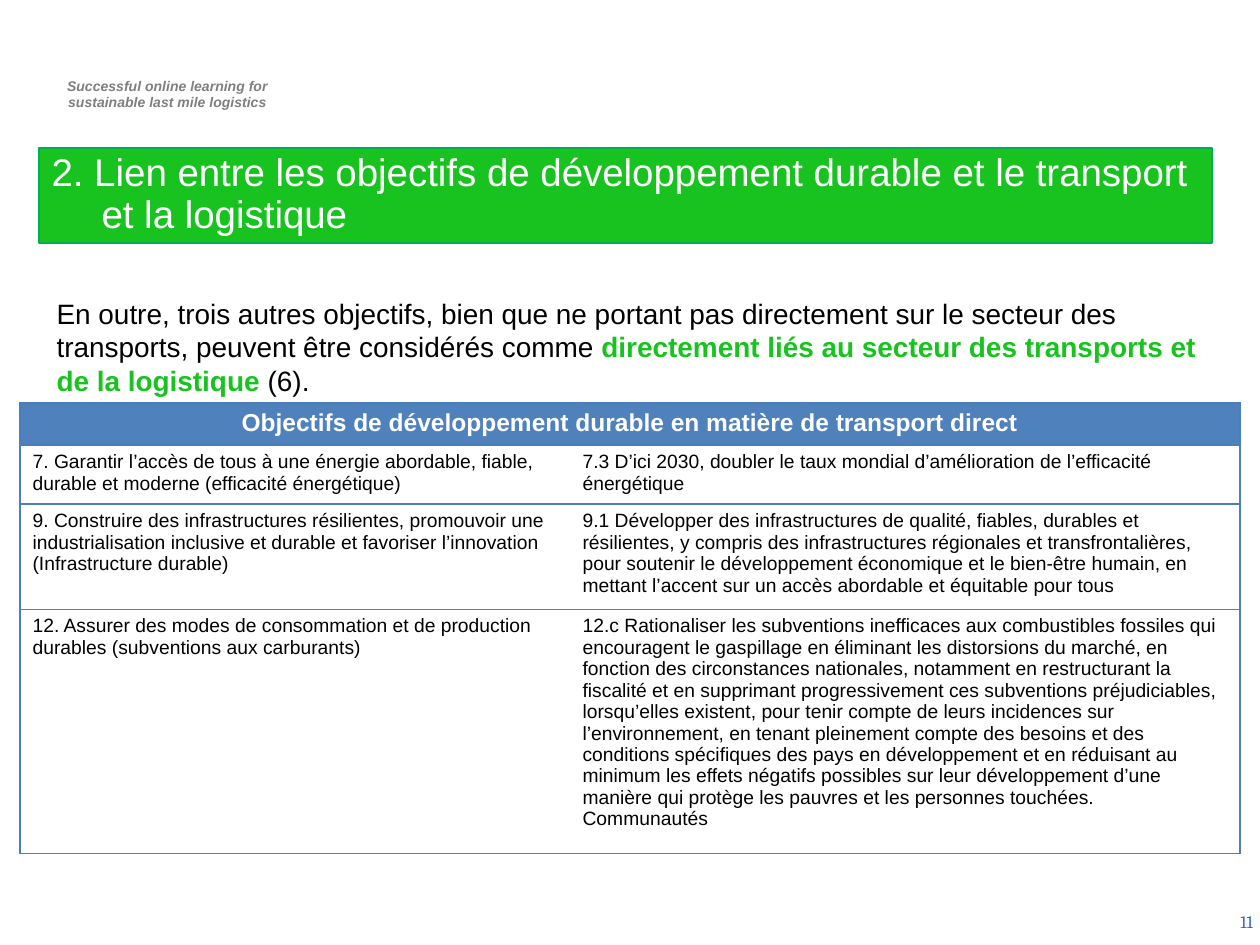
from dataclasses import dataclass

from lxml.etree import SubElement
from pptx import Presentation
from pptx.dml.color import RGBColor
from pptx.enum.text import MSO_ANCHOR as Anchor, MSO_AUTO_SIZE as AutoSize, PP_ALIGN as Align
from pptx.oxml.ns import qn
from pptx.util import Emu, Pt

WHITE, BLACK, GREEN, BLUE, BORDER = "FFFFFF", "000000", "18C320", "4F81BD", "4B7EBC"
COLUMNS = (550, 670)


@dataclass(frozen=True)
class Box:
    """A rectangle in px."""
    x: int
    y: int
    w: int
    h: int


@dataclass(frozen=True)
class Style:
    """The look of a run."""
    size: int
    color: str
    bold: bool = False
    italic: bool = False
    font: str = "Arial"


@dataclass(frozen=True)
class Goal:
    """A table row: the goal, its target and the row height in px."""
    goal: str
    target: str
    height: int


HEADING = "Objectifs de développement durable en matière de transport direct"
HEADING_HEIGHT = 41
GOALS = (
    Goal("7. Garantir l’accès de tous à une énergie abordable, fiable, durable et moderne "
         "(efficacité énergétique)",
         "7.3 D’ici 2030, doubler le taux mondial d’amélioration de l’efficacité énergétique", 59),
    Goal("9. Construire des infrastructures résilientes, promouvoir une industrialisation "
         "inclusive et durable et favoriser l’innovation (Infrastructure durable)",
         "9.1 Développer des infrastructures de qualité, fiables, durables et résilientes, "
         "y compris des infrastructures régionales et transfrontalières, pour soutenir le "
         "développement économique et le bien-être humain, en mettant l’accent sur un accès "
         "abordable et équitable pour tous", 105),
    Goal("12. Assurer des modes de consommation et de production durables "
         "(subventions aux carburants)",
         "12.c Rationaliser les subventions inefficaces aux combustibles fossiles qui "
         "encouragent le gaspillage en éliminant les distorsions du marché, en fonction des "
         "circonstances nationales, notamment en restructurant la fiscalité et en supprimant "
         "progressivement ces subventions préjudiciables, lorsqu’elles existent, pour tenir "
         "compte de leurs incidences sur l’environnement, en tenant pleinement compte des "
         "besoins et des conditions spécifiques des pays en développement et en réduisant au "
         "minimum les effets négatifs possibles sur leur développement d’une manière qui "
         "protège les pauvres et les personnes touchées.\vCommunautés", 244),
)


def px(n: int) -> Emu:
    """Turn px into EMU at 126 px to the inch."""
    return Emu(round(n * 914400 / 126))


def rgb(color: str) -> RGBColor:
    """Turn a hex string into a colour."""
    return RGBColor.from_string(color)


def place(sp, box: Box) -> None:
    """Move and size a shape."""
    sp.left, sp.top, sp.width, sp.height = map(px, (box.x, box.y, box.w, box.h))


def format_run(r, style: Style) -> None:
    """Apply a style to a run."""
    f = r.font
    f.name, f.size, f.bold, f.italic = style.font, Pt(style.size), style.bold, style.italic
    f.color.rgb = rgb(style.color)


def format_text(tf, style: Style, align=Align.LEFT) -> None:
    """Apply a style and an alignment to all the text of a frame."""
    tf.word_wrap = True
    for p in tf.paragraphs:
        p.alignment = align
        for r in p.runs:
            format_run(r, style)


def set_indent(p, left: int, first: int) -> None:
    """Set the left margin and the first-line indent of a paragraph in px."""
    ppr = p._p.get_or_add_pPr()
    ppr.set("marL", str(px(left)))
    ppr.set("indent", str(px(first)))


def add_text(s, box: Box, text: str, style: Style, align, anchor=Anchor.TOP):
    """Add a text box and return its frame."""
    tf = s.shapes.add_textbox(*map(px, (box.x, box.y, box.w, box.h))).text_frame
    tf.text = text
    tf.vertical_anchor = anchor
    format_text(tf, style, align)
    return tf


def fill_title(sp) -> None:
    """Write the title in its green bar."""
    place(sp, Box(39, 148, 1173, 95))
    sp.fill.solid()
    sp.fill.fore_color.rgb = rgb(GREEN)
    sp.line.color.rgb = rgb("00B050")
    sp.line.width = Pt(0.75)
    tf = sp.text_frame
    tf.text = ("2. Lien entre les objectifs de développement durable et le transport "
               "et la logistique")
    tf.auto_size, tf.vertical_anchor = AutoSize.NONE, Anchor.BOTTOM
    format_text(tf, Style(22, WHITE))
    tf.paragraphs[0].line_spacing = 0.9
    set_indent(tf.paragraphs[0], 50, -50)


def fill_body(sp) -> None:
    """Write the introduction with its green emphasis."""
    place(sp, Box(44, 290, 1168, 149))
    tf = sp.text_frame
    tf.auto_size, tf.word_wrap = AutoSize.NONE, True
    p = tf.paragraphs[0]
    set_indent(p, 0, 0)
    SubElement(p._p.get_or_add_pPr(), qn("a:buNone"))
    p.space_before = Pt(0)
    plain = Style(16, BLACK)
    for text, style in (
        ("En outre, trois autres objectifs, bien que ne portant pas directement sur le secteur "
         "des transports, peuvent être considérés comme ", plain),
        ("directement liés au secteur des transports et de la logistique ",
         Style(16, GREEN, bold=True)),
        ("(6).", plain),
    ):
        r = p.add_run()
        r.text = text
        format_run(r, style)


def set_borders(cell, sides: str) -> None:
    """Draw the named sides of a cell and clear the others."""
    tcpr = cell._tc.get_or_add_tcPr()
    for side in "LRTB":
        ln = SubElement(tcpr, qn(f"a:ln{side}"), w=str(Pt(0.75)))
        if side in sides:
            SubElement(SubElement(ln, qn("a:solidFill")), qn("a:srgbClr"), val=BORDER)
        else:
            SubElement(ln, qn("a:noFill"))


def fill_cell(cell, text: str, style: Style, fill: str, sides: str, align=Align.LEFT) -> None:
    """Write and format a table cell."""
    set_borders(cell, sides)
    cell.fill.solid()
    cell.fill.fore_color.rgb = rgb(fill)
    cell.text = text
    format_text(cell.text_frame, style, align)


def add_goals(s) -> None:
    """Add the table of goals under one merged heading."""
    heights = [HEADING_HEIGHT] + [g.height for g in GOALS]
    area = map(px, (20, 403, sum(COLUMNS), sum(heights)))
    table = s.shapes.add_table(len(heights), len(COLUMNS), *area).table
    for column, w in zip(table.columns, COLUMNS):
        column.width = px(w)
    for row, h in zip(table.rows, heights):
        row.height = px(h)
    table.cell(0, 0).merge(table.cell(0, 1))
    fill_cell(table.cell(0, 0), HEADING, Style(14, WHITE, bold=True), BLUE, "LRTB", Align.CENTER)
    for i, g in enumerate(GOALS, 1):
        for j, (text, sides) in enumerate(((g.goal, "LTB"), (g.target, "RTB"))):
            fill_cell(table.cell(i, j), text, Style(11, BLACK), WHITE, sides)


def main() -> None:
    """Build and save the slide."""
    prs = Presentation()
    prs.slide_width, prs.slide_height = px(1260), px(945)
    s = prs.slides.add_slide(prs.slide_layouts[1])
    tf = add_text(s, Box(37, 71, 256, 47),
                  "Successful online learning for\nsustainable last mile logistics",
                  Style(8, "7F7F7F", bold=True, italic=True), Align.CENTER)
    for p in tf.paragraphs:
        set_indent(p, 5, 0)
    fill_title(s.shapes.title)
    fill_body(s.placeholders[1])
    add_goals(s)
    tf = add_text(s, Box(971, 898, 289, 47), "11", Style(10, "3366CC", font="Cambria"),
                  Align.RIGHT, Anchor.MIDDLE)
    tf.margin_right = px(7)
    prs.save("out.pptx")


if __name__ == "__main__":
    main()
